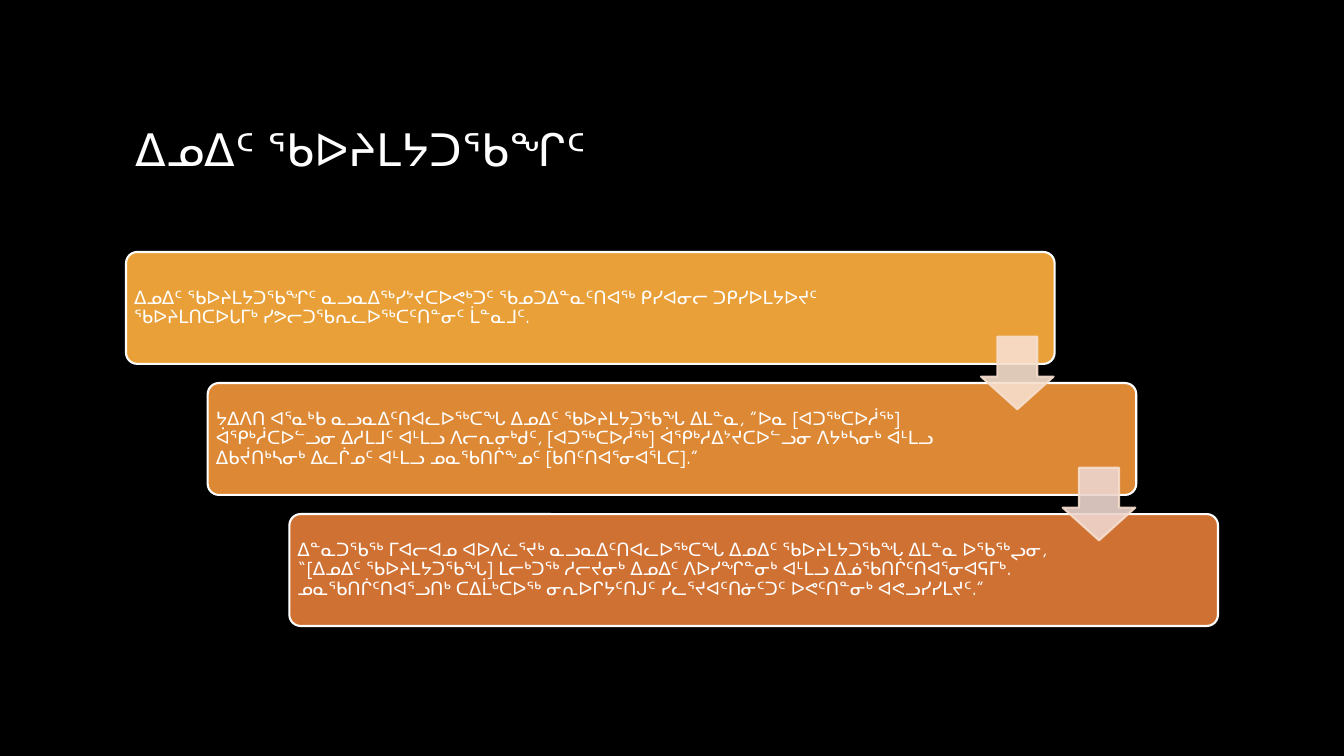
import dataclasses

import lxml.etree
import pptx
import pptx.dml.color
import pptx.enum.shapes
import pptx.enum.text
import pptx.oxml.ns
import pptx.util

Inches = pptx.util.Inches
Shape = pptx.enum.shapes.MSO_SHAPE
qn = pptx.oxml.ns.qn


@dataclasses.dataclass(frozen=True)
class Theme:
    font: str = "TeX Gyre Adventor"
    background: str = "000000"
    light: str = "FFFFFF"
    arrow_line: str = "F7DFCE"
    title_size: float = 32
    body_size: float = 13
    line_width: float = 1.5
    arrow_alpha: int = 90


@dataclasses.dataclass(frozen=True)
class Step:
    text: str
    fill: str
    text_width: float
    arrow_fill: str = ""


THEME = Theme()
TITLE = "ᐃᓄᐃᑦ ᖃᐅᔨᒪᔭᑐᖃᖏᑦ"
STEPS = [
    Step(
        "ᐃᓄᐃᑦ ᖃᐅᔨᒪᔭᑐᖃᖏᑦ ᓇᓗᓇᐃᖅᓯᔾᔪᑕᐅᕙᒃᑐᑦ ᖃᓄᑐᐃᓐᓇᑦᑎᐊᖅ ᑭᓯᐊᓂᓕ ᑐᑭᓯᐅᒪᔭᐅᔪᑦ "
        "ᖃᐅᔨᒪᑎᑕᐅᒐᒥᒃ ᓯᕗᓕᑐᖃᕆᓚᐅᖅᑕᑦᑎᓐᓂᑦ ᒫᓐᓇᒧᑦ.",
        "E9A039", 8.01, "F7DFCE",
    ),
    Step(
        "ᔭᐃᐱᑎ ᐊᕐᓇᒃᑲ ᓇᓗᓇᐃᑦᑎᐊᓚᐅᖅᑕᖓ ᐃᓄᐃᑦ ᖃᐅᔨᒪᔭᑐᖃᖓ ᐃᒪᓐᓇ, ”ᐅᓇ [ᐊᑐᖅᑕᐅᓲᖅ] "
        "ᐋᕿᒃᓲᑕᐅᓪᓗᓂ ᐃᓱᒪᒧᑦ ᐊᒻᒪᓗ ᐱᓕᕆᓂᒃᑯᑦ, [ᐊᑐᖅᑕᐅᓲᖅ] ᐋᕿᒃᓱᐃᔾᔪᑕᐅᓪᓗᓂ ᐱᔭᒃᓴᓂᒃ ᐊᒻᒪᓗ "
        "ᐃᑲᔫᑎᒃᓴᓂᒃ ᐃᓚᒌᓄᑦ ᐊᒻᒪᓗ ᓄᓇᖃᑎᒌᖕᓄᑦ [ᑲᑎᑦᑎᐊᕐᓂᐊᕐᒪᑕ].”",
        "DD8835", 7.61, "EDD5CE",
    ),
    Step(
        "ᐃᓐᓇᑐᖃᖅ ᒥᐊᓕᐊᓄ ᐊᐅᐱᓛᕐᔪᒃ ᓇᓗᓇᐃᑦᑎᐊᓚᐅᖅᑕᖓ ᐃᓄᐃᑦ ᖃᐅᔨᒪᔭᑐᖃᖓ ᐃᒪᓐᓇ ᐅᖃᖅᖢᓂ, "
        "“[ᐃᓄᐃᑦ ᖃᐅᔨᒪᔭᑐᖃᖓ] ᒪᓕᒃᑐᖅ ᓱᓕᔪᓂᒃ ᐃᓄᐃᑦ ᐱᐅᓯᖏᓐᓂᒃ ᐊᒻᒪᓗ ᐃᓅᖃᑎᒌᑦᑎᐊᕐᓂᐊᕋᒥᒃ. "
        "ᓄᓇᖃᑎᒌᑦᑎᐊᕐᓗᑎᒃ ᑕᐃᒫᒃᑕᐅᖅ ᓂᕆᐅᒋᔭᑦᑎᒍᑦ ᓯᓚᕐᔪᐊᑦᑎᓃᑦᑐᑦ ᐅᕙᑦᑎᓐᓂᒃ ᐊᕙᓗᓯᓯᒪᔪᑦ.”",
        "CF7133", 7.61,
    ),
]
LEFT, TOP = 1.25, 2.5
STEP_X, STEP_Y = 0.81, 1.3
BOX_W, BOX_H = 9.21, 1.11
TEXT_PAD = 0.03
ARROW_X, ARROW_Y, ARROW_SIZE = 8.48, 0.84, 0.72


def rgb(color: str) -> pptx.dml.color.RGBColor:
    return pptx.dml.color.RGBColor.from_string(color)


def add_text(s, text: str, left: float, top: float, width: float, height: float,
             size: float, inset: float, spacing: float) -> None:
    tb = s.shapes.add_textbox(Inches(left), Inches(top), Inches(width), Inches(height))
    tf = tb.text_frame
    tf.text = text
    tf.word_wrap = True
    tf.vertical_anchor = pptx.enum.text.MSO_ANCHOR.MIDDLE
    tf.margin_left = tf.margin_right = Inches(inset)
    tf.margin_top = tf.margin_bottom = Inches(0.05)
    p = tf.paragraphs[0]
    p.line_spacing = spacing
    r = p.runs[0]
    r.font.size = pptx.util.Pt(size)
    r.font.color.rgb = rgb(THEME.light)
    r.font.name = THEME.font
    for tag in ("a:ea", "a:cs"):
        lxml.etree.SubElement(r.font._element, qn(tag), typeface=THEME.font)


def add_block(s, kind, left: float, top: float, width: float, height: float,
              fill: str, line: str, adjustments: tuple[float, ...]):
    sp = s.shapes.add_shape(kind, Inches(left), Inches(top), Inches(width), Inches(height))
    sp.shadow.inherit = False
    for i, value in enumerate(adjustments):
        sp.adjustments[i] = value
    sp.fill.solid()
    sp.fill.fore_color.rgb = rgb(fill)
    sp.line.color.rgb = rgb(line)
    sp.line.width = pptx.util.Pt(THEME.line_width)
    return sp


def add_step(s, step: Step, index: int) -> None:
    left, top = LEFT + index * STEP_X, TOP + index * STEP_Y
    add_block(s, Shape.ROUNDED_RECTANGLE, left, top, BOX_W, BOX_H,
              step.fill, THEME.light, (0.1,))
    add_text(s, step.text, left + TEXT_PAD, top + TEXT_PAD, step.text_width,
             BOX_H - 2 * TEXT_PAD, THEME.body_size, 0.05, 0.9)


def add_arrow(s, step: Step, index: int) -> None:
    sp = add_block(s, Shape.DOWN_ARROW, LEFT + ARROW_X + index * STEP_X,
                   TOP + ARROW_Y + index * STEP_Y, ARROW_SIZE, ARROW_SIZE,
                   step.arrow_fill, THEME.arrow_line, (0.55, 0.45))
    for color in sp._element.spPr.iter(qn("a:srgbClr")):
        lxml.etree.SubElement(color, qn("a:alpha"), val=str(THEME.arrow_alpha * 1000))


def main() -> None:
    prs = pptx.Presentation()
    prs.slide_width, prs.slide_height = Inches(13.33), Inches(7.5)
    s = prs.slides.add_slide(prs.slide_layouts[6])
    s.background.fill.solid()
    s.background.fill.fore_color.rgb = rgb(THEME.background)
    add_text(s, TITLE, LEFT, 0.67, 10.83, 1.61, THEME.title_size, 0.1, 1.0)
    for i, step in enumerate(STEPS):
        add_step(s, step, i)
    for i, step in enumerate(STEPS[:-1]):
        add_arrow(s, step, i)
    prs.save("out.pptx")


if __name__ == "__main__":
    main()
